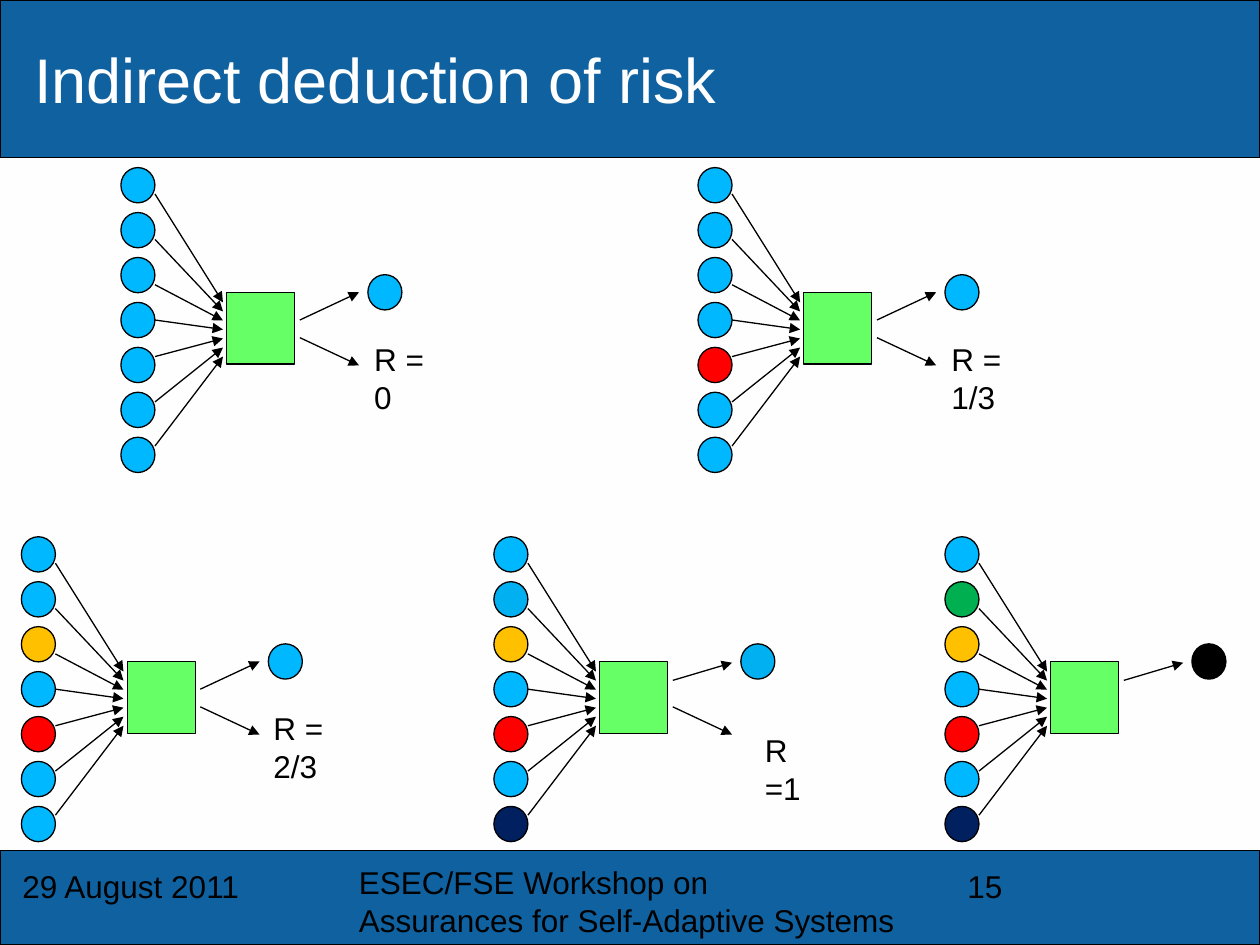
import pptx
import pptx.dml.color
import pptx.enum.shapes
import pptx.enum.text
import pptx.oxml
import pptx.oxml.ns
import pptx.util

Inches = pptx.util.Inches
Pt = pptx.util.Pt
RGBColor = pptx.dml.color.RGBColor
SHAPE = pptx.enum.shapes.MSO_SHAPE
ANCHOR = pptx.enum.text.MSO_ANCHOR
ALIGN = pptx.enum.text.PP_ALIGN
AUTO = pptx.enum.text.MSO_AUTO_SIZE

BLACK = RGBColor(0x00, 0x00, 0x00)
WHITE = RGBColor(0xFF, 0xFF, 0xFF)
PAPER = RGBColor(0xFE, 0xFE, 0xFE)
BAND = RGBColor(0x10, 0x61, 0xA0)
SKY = RGBColor(0x00, 0xB8, 0xFF)
CYAN = RGBColor(0x00, 0xB0, 0xF0)
LIME = RGBColor(0x66, 0xFF, 0x66)
RED = RGBColor(0xFF, 0x00, 0x00)
AMBER = RGBColor(0xFF, 0xC0, 0x00)
GREEN = RGBColor(0x00, 0xB0, 0x50)
NAVY = RGBColor(0x00, 0x20, 0x60)

STEEP_UP = (1.21, 0.99)
SHALLOW_UP = (1.14, 1.0)
DOWN = (1.35, 1.57)


class Deck:
    font = {"name": "Arial", "size": Pt(18)}
    line_width = Pt(0.75)

    def __init__(self):
        self.prs = pptx.Presentation()
        self.prs.slide_width, self.prs.slide_height = Inches(10), Inches(7.5)
        self.s = self.prs.slides.add_slide(self.prs.slide_layouts[5])
        fill = self.s.background.fill
        fill.solid()
        fill.fore_color.rgb = PAPER

    def set_text(self, tf, text, color=BLACK, insets=(0.1, 0.05), frame=None, **font):
        x, y = map(Inches, insets)
        settings = {"margin_left": x, "margin_right": x, "margin_top": y,
                    "margin_bottom": y, "word_wrap": True, **(frame or {})}
        for key, value in settings.items():
            setattr(tf, key, value)
        p = tf.paragraphs[0]
        p.text = text
        p.alignment = ALIGN.LEFT
        for r in p.runs:
            for key, value in {**self.font, **font}.items():
                setattr(r.font, key, value)
            r.font.color.rgb = color

    def title(self, text, *box):
        sp = self.s.shapes.title
        for key, value in zip(("left", "top", "width", "height"), box):
            setattr(sp, key, Inches(value))
        frame = {"vertical_anchor": ANCHOR.MIDDLE, "auto_size": AUTO.NONE}
        self.set_text(sp.text_frame, text, WHITE, frame=frame, size=Pt(36))
        self.s.shapes._spTree.append(sp._element)

    def text(self, text, *box, **style):
        sp = self.s.shapes.add_textbox(*map(Inches, box))
        self.set_text(sp.text_frame, text, **style)

    def label(self, text, *box):
        frame = {"word_wrap": False, "auto_size": AUTO.SHAPE_TO_FIT_TEXT}
        self.text(text, *box, insets=(0.09, 0.04), frame=frame)

    def shape(self, kind, color, *box):
        sp = self.s.shapes.add_shape(kind, *map(Inches, box))
        sp.shadow.inherit = False
        sp.fill.solid()
        sp.fill.fore_color.rgb = color
        sp.line.color.rgb = BLACK
        sp.line.width = self.line_width

    def circle(self, color, x, y):
        self.shape(SHAPE.OVAL, color, x, y, 0.27, 0.28)

    def arrow(self, *ends):
        straight = pptx.enum.shapes.MSO_CONNECTOR.STRAIGHT
        c = self.s.shapes.add_connector(straight, *map(Inches, ends))
        c.line.color.rgb = BLACK
        c.line.width = self.line_width
        ns = pptx.oxml.ns.nsdecls("a")
        c.line._get_or_add_ln().append(
            pptx.oxml.parse_xml(f'<a:tailEnd {ns} type="triangle"/>'))
        c._element.spPr.append(pptx.oxml.parse_xml(f"<a:effectLst {ns}/>"))

    def network(self, x, y, inputs, output, out_arrows):
        starts = (0.21, 0.57, 0.93, 1.21, 1.5, 1.86, 2.21)
        for i, (color, start) in enumerate(zip(inputs, starts)):
            self.circle(color, x, y + 2.14 * i / 6)
            self.arrow(x + 0.27, y + start, x + 0.81, y + 1.07 + 0.43 * i / 6)
        self.shape(SHAPE.RECTANGLE, LIME, x + 0.84, y + 0.99, 0.54, 0.57)
        self.circle(output, x + 1.96, y + 0.85)
        for start, end in out_arrows:
            self.arrow(x + 1.42, y + start, x + 1.89, y + end)


def main():
    deck = Deck()
    deck.shape(SHAPE.RECTANGLE, BAND, 0, 6.75, 10, 0.75)
    deck.shape(SHAPE.RECTANGLE, BAND, 0, 0, 10, 1.25)
    deck.title("Indirect deduction of risk", 0.17, 0, 8.41, 1.25)

    networks = [
        (0.96, 1.33, {}, SKY, (STEEP_UP, DOWN)),
        (5.54, 1.33, {4: RED}, SKY, (STEEP_UP, DOWN)),
        (0.17, 4.26, {2: AMBER, 4: RED}, SKY, (STEEP_UP, DOWN)),
        (3.92, 4.26, {1: CYAN, 2: AMBER, 4: RED, 6: NAVY}, CYAN,
         (SHALLOW_UP, DOWN)),
        (7.5, 4.26, {1: GREEN, 2: AMBER, 4: RED, 6: NAVY}, BLACK,
         (SHALLOW_UP,)),
    ]
    for x, y, marked, output, out_arrows in networks:
        inputs = [marked.get(i, SKY) for i in range(7)]
        deck.network(x, y, inputs, output, out_arrows)

    labels = [
        ("R = 0", 2.88, 2.66, 0.78),
        ("R = 1/3", 7.46, 2.66, 0.99),
        ("R = 2/3", 2.08, 5.59, 0.99),
        ("R =1", 5.98, 5.76, 0.71),
    ]
    for text, x, y, width in labels:
        deck.label(text, x, y, width, 0.39)

    deck.text("29 August 2011", 0.08, 6.83, 2.33, 0.52)
    deck.text("ESEC/FSE Workshop on \vAssurances for Self-Adaptive Systems",
              2.75, 6.8, 4.58, 0.52)
    deck.text("15", 7.58, 6.83, 2.33, 0.52)
    deck.prs.save("out.pptx")


if __name__ == "__main__":
    main()
